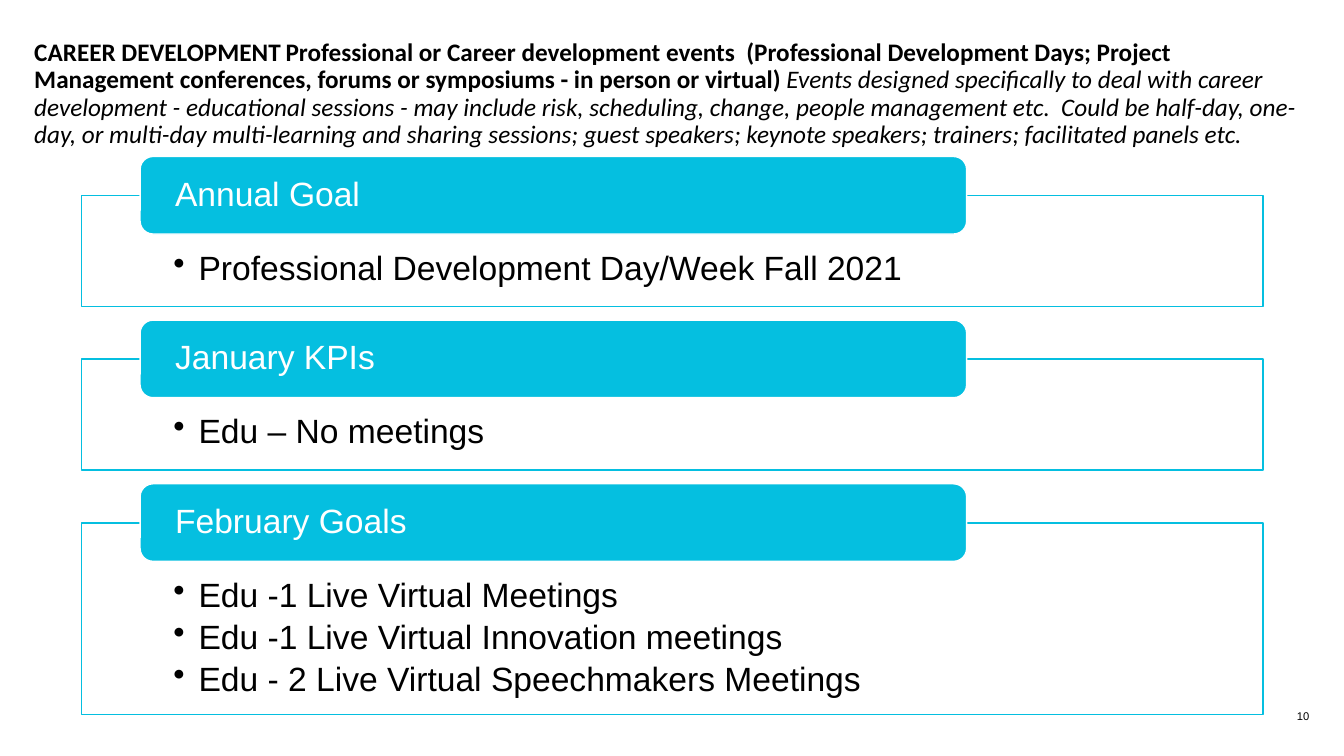
from dataclasses import dataclass

from lxml import etree
from pptx import Presentation
from pptx import util as u
from pptx.dml.color import RGBColor
from pptx.enum import shapes, text
from pptx.oxml.ns import qn

Pt = u.Pt


@dataclass(frozen=True)
class Theme:
    accent: str = "05BFE0"
    white: str = "FFFFFF"
    black: str = "000000"
    heading_font: str = "Calibri"
    body_font: str = "Arial"
    heading: int = 18
    spacer: int = 12
    body: int = 24
    number: int = 8
    leading: float = 0.9


LEFT, WIDTH = 58.3, 843.8
FIRST_TOP, GAP = 139.7, 37.7
BASE_H, ITEM_H = 50.4, 28.8
TAB_LEFT, TAB_W, TAB_H, TAB_RISE = 100.1, 590.4, 55.4, 27.9

HEADING = [
    ("CAREER DEVELOPMENT", True, False),
    ("Professional or Career development events  (Professional Development Days; "
     "Project Management conferences, forums or symposiums - in person or virtual)",
     True, False),
    ("Events designed specifically to deal with career development - educational "
     "sessions - may include risk, scheduling, change, people management etc.  "
     "Could be half-day, one-day, or multi-day multi-learning and sharing sessions; "
     "guest speakers; keynote speakers; trainers; facilitated panels etc.",
     False, True),
]

SECTIONS = [
    ("Annual Goal", ["Professional Development Day/Week Fall 2021"]),
    ("January KPIs", ["Edu – No meetings"]),
    ("February Goals", ["Edu -1 Live Virtual Meetings",
                        "Edu -1 Live Virtual Innovation meetings",
                        "Edu - 2 Live Virtual Speechmakers Meetings"]),
]


class SlideBuilder:
    def __init__(self, prs, theme):
        self.t = theme
        self.s = prs.slides.add_slide(prs.slide_layouts[6])

    def frame(self, sp, insets, anchor):
        tf = sp.text_frame
        tf.word_wrap = True
        tf.auto_size = text.MSO_AUTO_SIZE.NONE
        tf.vertical_anchor = anchor
        tf.margin_left, tf.margin_top, tf.margin_right, tf.margin_bottom = map(Pt, insets)
        return tf

    def run(self, p, words, size, font, color, bold=False, italic=False):
        r = p.add_run()
        r.text = words
        r.font.size, r.font.name = Pt(size), font
        r.font.bold, r.font.italic = bold, italic
        r.font.color.rgb = RGBColor.from_string(color)

    def box(self, kind, x, y, w, h, fill, line):
        sp = self.s.shapes.add_shape(kind, Pt(x), Pt(y), Pt(w), Pt(h))
        sp.shadow.inherit = False
        sp.fill.solid()
        sp.fill.fore_color.rgb = RGBColor.from_string(fill)
        sp.line.color.rgb = RGBColor.from_string(line)
        sp.line.width = Pt(1)
        return sp

    def textbox(self, x, y, w, h, anchor):
        sp = self.s.shapes.add_textbox(Pt(x), Pt(y), Pt(w), Pt(h))
        return self.frame(sp, (0, 0, 0, 0), anchor).paragraphs[0]

    def heading(self, parts):
        t = self.t
        p = self.textbox(24.5, 25.9, 910.1, 82.8, text.MSO_ANCHOR.MIDDLE)
        p.line_spacing = t.leading
        for i, (words, bold, italic) in enumerate(parts):
            if i:
                self.run(p, " ", t.spacer, t.body_font, t.black)
            self.run(p, words, t.heading, t.heading_font, t.black, bold, italic)

    def panel(self, y, h, items):
        """Outlined rectangle with a bulleted list."""
        t = self.t
        sp = self.box(shapes.MSO_SHAPE.RECTANGLE, LEFT, y, WIDTH, h, t.white, t.accent)
        color = sp.fill._xPr.find(qn("a:solidFill"))[0]
        etree.SubElement(color, qn("a:alpha"), val="90000")
        tf = self.frame(sp, (65.5, 39.6, 65.5, 13.7), text.MSO_ANCHOR.TOP)
        for i, item in enumerate(items):
            p = tf.add_paragraph() if i else tf.paragraphs[0]
            pPr = p._p.get_or_add_pPr()
            pPr.set("marL", str(Pt(18)))
            pPr.set("indent", str(-Pt(18)))
            etree.SubElement(pPr, qn("a:buChar"), char="•")
            p.alignment = text.PP_ALIGN.LEFT
            p.line_spacing = t.leading
            p.space_after = Pt(4.2)
            self.run(p, item, t.body, t.body_font, t.black)

    def tab(self, y, title):
        """Rounded title bar that overlaps the top of a panel."""
        t = self.t
        sp = self.box(shapes.MSO_SHAPE.ROUNDED_RECTANGLE, TAB_LEFT, y, TAB_W, TAB_H,
                      t.accent, t.white)
        p = self.frame(sp, (22.3, 0, 22.3, 0), text.MSO_ANCHOR.MIDDLE).paragraphs[0]
        p.alignment = text.PP_ALIGN.LEFT
        p.line_spacing = t.leading
        self.run(p, title, t.body, t.body_font, t.white)

    def number(self, value):
        p = self.textbox(902.9, 500.4, 32.4, 15.8, text.MSO_ANCHOR.BOTTOM)
        p.alignment = text.PP_ALIGN.RIGHT
        self.run(p, value, self.t.number, self.t.body_font, self.t.black)


def main():
    prs = Presentation()
    prs.slide_width, prs.slide_height = Pt(960), Pt(540)
    slide = SlideBuilder(prs, Theme())
    slide.heading(HEADING)
    y = FIRST_TOP
    for title, items in SECTIONS:
        h = BASE_H + ITEM_H * len(items)
        slide.panel(y, h, items)
        slide.tab(y - TAB_RISE, title)
        y += h + GAP
    slide.number("10")
    prs.save("out.pptx")


if __name__ == "__main__":
    main()
